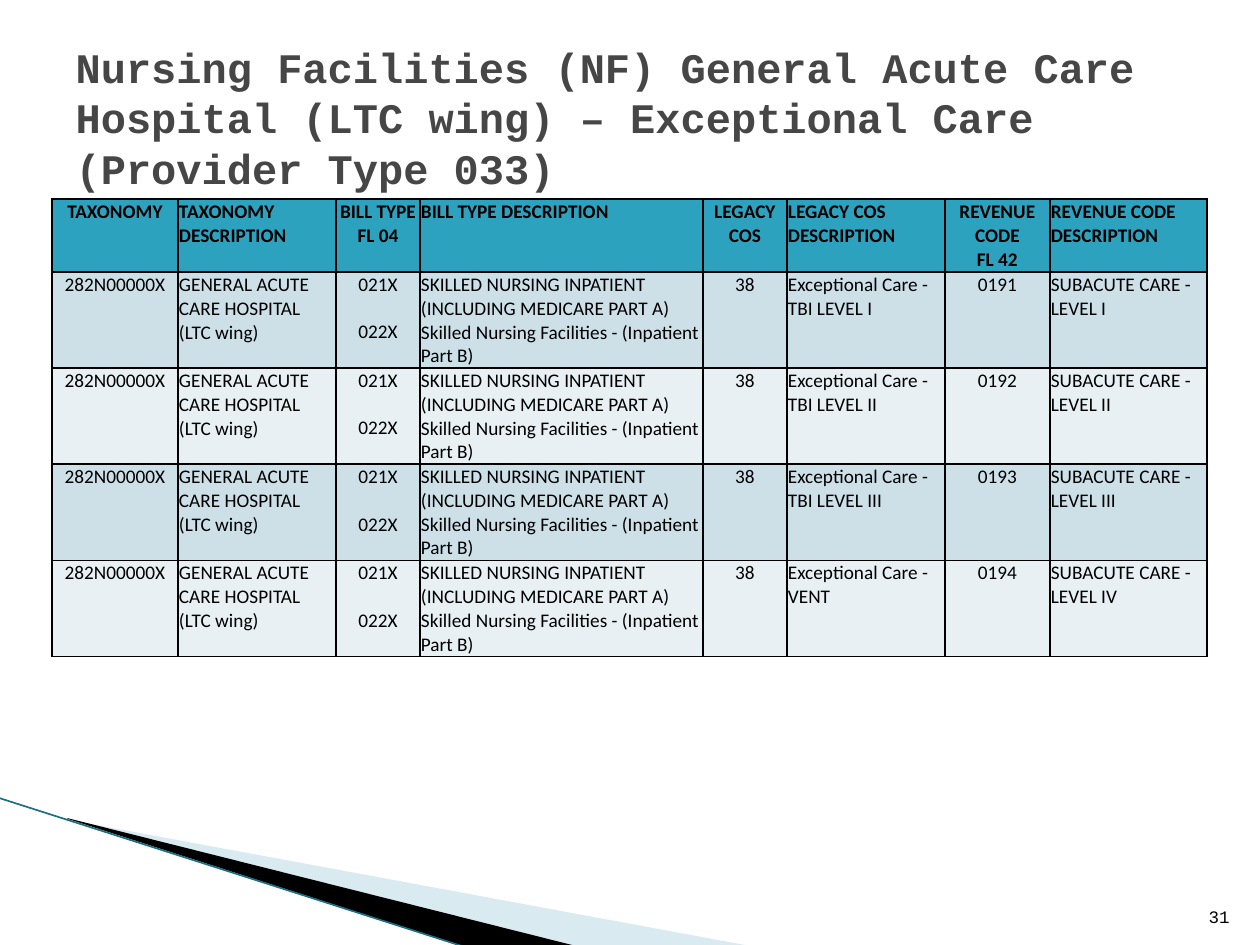
from dataclasses import dataclass

from lxml import etree
from pptx import Presentation
from pptx import util as u
from pptx.dml.color import RGBColor
from pptx.enum import shapes, text
from pptx.oxml import ns

PX = 914400 / 126


@dataclass(frozen=True)
class Theme:
    ink: str = "000000"
    title: str = "464646"
    header: str = "2DA2BF"
    bands: tuple = ("CDE0E8", "E8F0F4")
    wedge: str = "A0CBDC"
    edge: str = "1B7083"
    mono: str = "Courier New"
    sans: str = "Calibri"
    title_size: int = 24
    cell_size: int = 11
    number_size: int = 10


theme = Theme()


def px(*lengths):
    return [u.Emu(round(length * PX)) for length in lengths]


def style_text(frame, color, align, **font_format):
    for paragraph in frame.paragraphs:
        paragraph.alignment = align
        for run in paragraph.runs:
            run.font.color.rgb = RGBColor.from_string(color)
            for key, value in font_format.items():
                setattr(run.font, key, value)


LEFT, CENTER, RIGHT = text.PP_ALIGN.LEFT, text.PP_ALIGN.CENTER, text.PP_ALIGN.RIGHT

prs = Presentation()
prs.slide_width, prs.slide_height = px(1260, 945)
slide = prs.slides.add_slide(prs.slide_layouts[5])

# Title
title = slide.shapes.title
title.left, title.top, title.width, title.height = px(63, 38, 1134, 158)
title_frame = title.text_frame
title_frame.text = ("Nursing Facilities (NF) General Acute Care Hospital (LTC wing) "
                    "– Exceptional Care\v(Provider Type 033)")
title_format = {"word_wrap": True, "auto_size": text.MSO_AUTO_SIZE.NONE,
                "vertical_anchor": text.MSO_ANCHOR.MIDDLE}
for key, value in title_format.items():
    setattr(title_frame, key, value)
title_frame.paragraphs[0].line_spacing = u.Pt(28.8)
style_text(title_frame, theme.title, LEFT, name=theme.mono,
           size=u.Pt(theme.title_size), bold=True)

# Corner decoration
wedges = [
    (theme.wedge, 40, [(69, 820), (750, 946), (575, 946), (69, 819)]),
    (theme.ink, 100, [(67, 818), (576, 946), (469, 948), (68, 819)]),
]
for color, opacity, points in wedges:
    builder = slide.shapes.build_freeform(*points[0], scale=PX)
    builder.add_line_segments(points[1:], close=True)
    wedge = builder.convert_to_shape()
    wedge.shadow.inherit = False
    wedge.line.fill.background()
    wedge.fill.solid()
    wedge.fill.fore_color.rgb = RGBColor.from_string(color)
    if opacity < 100:
        tint = wedge.fill._xPr.find(".//" + ns.qn("a:srgbClr"))
        etree.SubElement(tint, ns.qn("a:alpha"), val=str(opacity * 1000))

edge = slide.shapes.add_connector(shapes.MSO_CONNECTOR.STRAIGHT, *px(-1, 798, 468, 948))
edge.line.color.rgb = RGBColor.from_string(theme.edge)
edge.line.width = u.Pt(0.95)
etree.SubElement(edge._element.spPr, ns.qn("a:effectLst"))

# Billing code table
columns = [
    ("TAXONOMY", 126, CENTER),
    ("TAXONOMY DESCRIPTION", 158, LEFT),
    ("BILL TYPE\nFL 04", 84, CENTER),
    ("BILL TYPE DESCRIPTION", 283, LEFT),
    ("LEGACY COS", 84, CENTER),
    ("LEGACY COS DESCRIPTION", 158, LEFT),
    ("REVENUE CODE\nFL 42", 105, CENTER),
    ("REVENUE CODE DESCRIPTION", 157, LEFT),
]
care_levels = [
    ("TBI LEVEL I", "0191", "LEVEL I"),
    ("TBI LEVEL II", "0192", "LEVEL II"),
    ("TBI LEVEL III", "0193", "LEVEL III"),
    ("VENT", "0194", "LEVEL IV"),
]
rows = [[heading for heading, _, _ in columns]]
for care, revenue_code, subacute in care_levels:
    rows.append([
        "282N00000X",
        "GENERAL ACUTE CARE HOSPITAL (LTC wing)",
        "021X\n022X",
        "SKILLED NURSING INPATIENT (INCLUDING MEDICARE PART A)\n"
        "Skilled Nursing Facilities - (Inpatient Part B)",
        "38",
        f"Exceptional Care - {care}",
        revenue_code,
        f"SUBACUTE CARE - {subacute}",
    ])
HEADER_HEIGHT, ROW_HEIGHT, BILL_TYPE = 73, 96, 2
table_height = HEADER_HEIGHT + ROW_HEIGHT * len(care_levels)
table = slide.shapes.add_table(
    len(rows), len(columns),
    *px(52, 199, sum(width for _, width, _ in columns), table_height)).table
table.first_row = table.horz_banding = False
for column, (_, width, _) in zip(table.columns, columns):
    column.width, = px(width)

inset, = px(1)
cell_format = {"margin_left": inset, "margin_top": inset, "margin_right": inset,
               "margin_bottom": 0, "vertical_anchor": text.MSO_ANCHOR.TOP}
for r, values in enumerate(rows):
    is_header = r == 0
    table.rows[r].height, = px(HEADER_HEIGHT if is_header else ROW_HEIGHT)
    fill = theme.header if is_header else theme.bands[(r - 1) % 2]
    for c, value in enumerate(values):
        cell = table.cell(r, c)
        cell.text = value
        for key, setting in cell_format.items():
            setattr(cell, key, setting)
        cell.fill.solid()
        cell.fill.fore_color.rgb = RGBColor.from_string(fill)
        style_text(cell.text_frame, theme.ink, columns[c][2], name=theme.sans,
                   size=u.Pt(theme.cell_size), bold=is_header)
        if c == BILL_TYPE and not is_header:
            cell.text_frame.paragraphs[1].space_before = u.Pt(13.5)
        properties = cell._tc.get_or_add_tcPr()
        for position, side in enumerate(("lnL", "lnR", "lnT", "lnB")):
            border = etree.Element(ns.qn(f"a:{side}"), w=str(u.Pt(1)))
            solid = etree.SubElement(border, ns.qn("a:solidFill"))
            etree.SubElement(solid, ns.qn("a:srgbClr"), val=theme.ink)
            properties.insert(position, border)

# Slide number
number_frame = slide.shapes.add_textbox(*px(1192, 883, 50, 50)).text_frame
number_frame.text = "31"
number_frame.word_wrap = True
number_frame.vertical_anchor = text.MSO_ANCHOR.BOTTOM
style_text(number_frame, theme.ink, RIGHT, name=theme.mono, size=u.Pt(theme.number_size))

prs.save("out.pptx")
